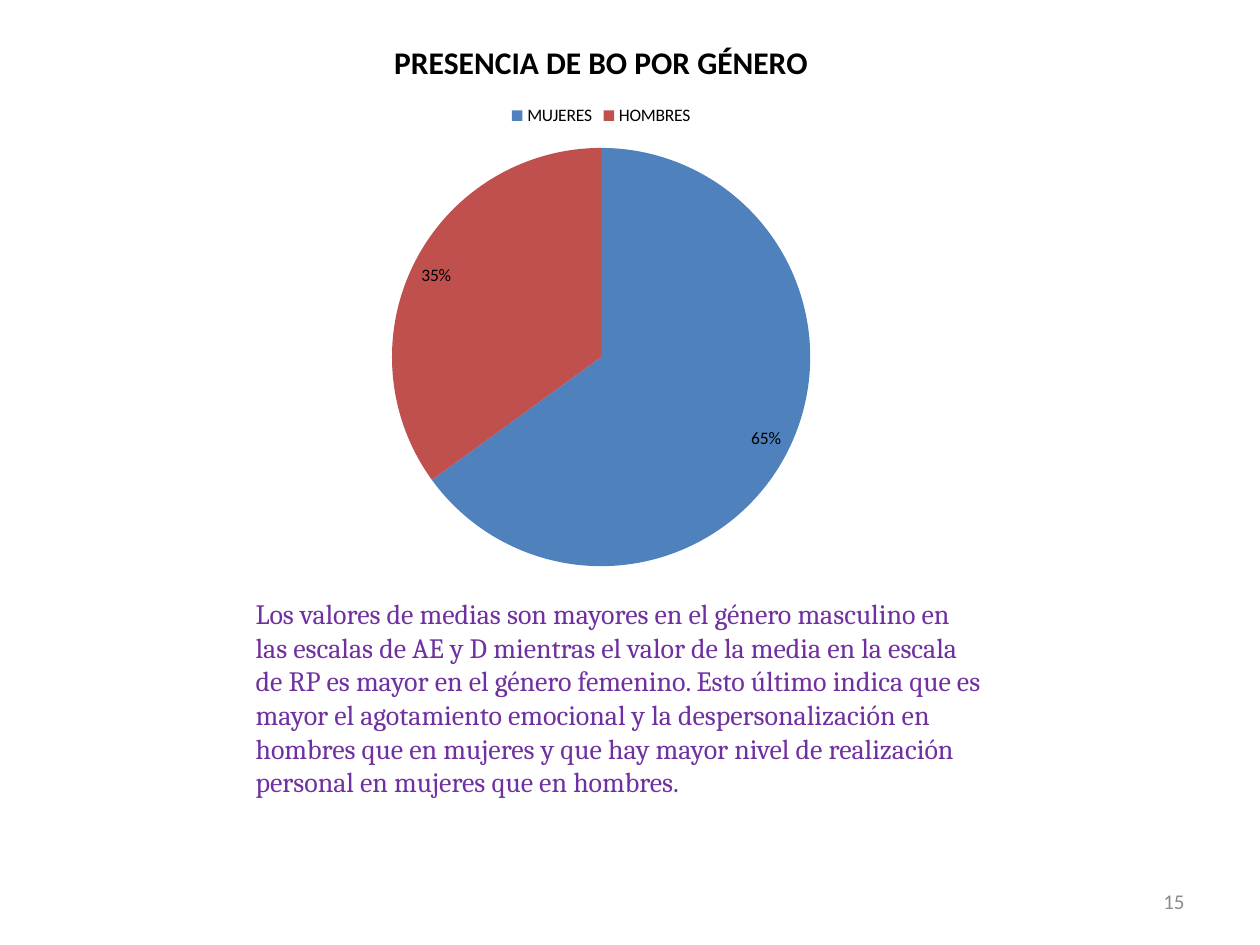
from pptx import Presentation
from pptx.chart.data import CategoryChartData
from pptx.dml.color import RGBColor
from pptx.enum.chart import XL_CHART_TYPE as ChartType, XL_LABEL_POSITION as LabelPos
from pptx.enum.chart import XL_LEGEND_POSITION as LegendPos
from pptx.enum.text import MSO_ANCHOR as Anchor, PP_ALIGN as Align
from pptx.util import Pt

COLORS = {"women": "4F81BD", "men": "C0504D", "text": "000000",
          "comment": "7030A0", "number": "8C8C8C"}
TITLE = "PRESENCIA DE BO POR GÉNERO"
SHARES = [("MUJERES", 65, "women"), ("HOMBRES", 35, "men")]
COMMENT = (
    "Los valores de medias son mayores en el género masculino en las escalas de AE y D "
    "mientras el valor de la media en la escala de RP es mayor en el género femenino. "
    "Esto último indica que es mayor el agotamiento emocional y la despersonalización en "
    "hombres que en mujeres y que hay mayor nivel de realización personal en mujeres que "
    "en hombres."
)
PAGE_NUMBER = "15"

CHART_BOX = (127.5, 9.5, 432, 324)
COMMENT_BOX = (139, 337.5, 432, 63.5)
NUMBER_BOX = (516, 500.5, 168, 28.75)


def style(font, size, color, name="Calibri", bold=False):
    font.name, font.size, font.bold = name, Pt(size), bold
    font.color.rgb = RGBColor.from_string(COLORS[color])


def add_text(s, box, text, size, color, name="Calibri", anchor=Anchor.TOP, align=Align.LEFT):
    tf = s.shapes.add_textbox(*map(Pt, box)).text_frame
    tf.word_wrap = True
    tf.vertical_anchor = anchor
    p = tf.paragraphs[0]
    p.alignment = align
    r = p.add_run()
    r.text = text
    style(r.font, size, color, name)
    return p


def add_pie(s):
    data = CategoryChartData()
    data.categories = [label for label, _, _ in SHARES]
    data.add_series("Series 1", [value for _, value, _ in SHARES])
    chart = s.shapes.add_chart(ChartType.PIE, *map(Pt, CHART_BOX), data).chart
    style(chart.font, 10, "text")

    chart.has_title = True
    r = chart.chart_title.text_frame.paragraphs[0].add_run()
    r.text = TITLE
    style(r.font, 18, "text", bold=True)

    chart.has_legend = True
    chart.legend.position = LegendPos.TOP
    chart.legend.include_in_layout = False
    style(chart.legend.font, 10, "text")

    plot = chart.plots[0]
    plot.vary_by_categories = True
    for i, (_, _, color) in enumerate(SHARES):
        fill = plot.series[0].points[i].format.fill
        fill.solid()
        fill.fore_color.rgb = RGBColor.from_string(COLORS[color])

    plot.has_data_labels = True
    labels = plot.data_labels
    labels.show_percentage, labels.show_value = True, False
    labels.number_format, labels.number_format_is_linked = "0%", False
    labels.position = LabelPos.INSIDE_END
    style(labels.font, 10, "text")


prs = Presentation()
prs.slide_width, prs.slide_height = Pt(720), Pt(540)
s = prs.slides.add_slide(prs.slide_layouts[6])
add_pie(s)
p = add_text(s, COMMENT_BOX, COMMENT, 16, "comment", name="Cambria")
p.space_before = Pt(3.2)
add_text(s, NUMBER_BOX, PAGE_NUMBER, 12, "number", anchor=Anchor.MIDDLE, align=Align.RIGHT)
prs.save("out.pptx")
